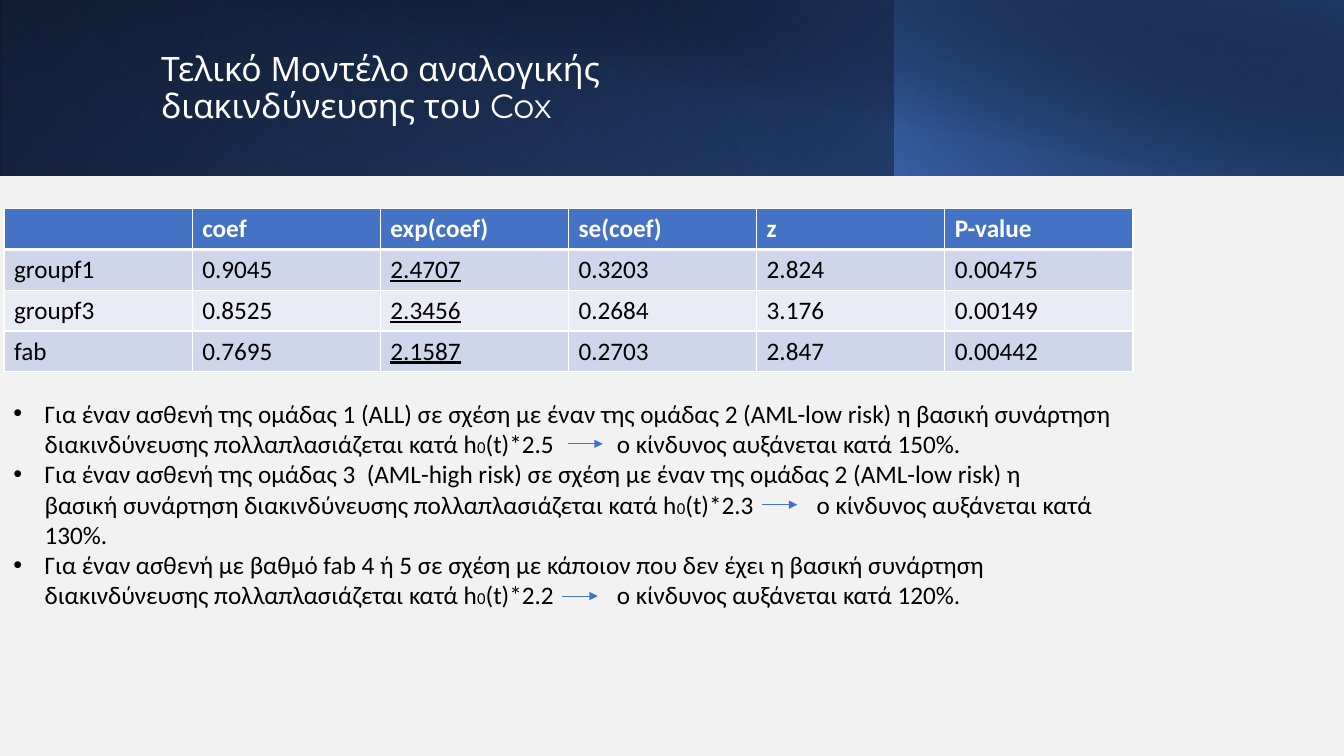
from lxml import etree
from pptx import Presentation
from pptx.dml.color import RGBColor
from pptx.enum.shapes import MSO_CONNECTOR, MSO_SHAPE
from pptx.enum.text import MSO_ANCHOR
from pptx.oxml.ns import qn
from pptx.util import Inches, Pt

RECT = MSO_SHAPE.RECTANGLE
STRAIGHT = MSO_CONNECTOR.STRAIGHT
MIDDLE = MSO_ANCHOR.MIDDLE

# Grid of tenths of an inch
COLS, ROWS = 133.33, 75
BANNER = 17.4
BODY_FONT, TITLE_FONT = "Calibri", "Montserrat"
COLORS = {
    "paper": "F2F2F2", "blue": "4472C4", "deep": "2F5597", "navy": "203864",
    "black": "000000", "white": "FFFFFF", "band": "CFD5EA", "pale": "E9EBF5",
}

TITLE = ["Τελικό Μοντέλο αναλογικής", "διακινδύνευσης του Cox"]
COX_TABLE = [
    ["", "coef", "exp(coef)", "se(coef)", "z", "P-value"],
    ["groupf1", "0.9045", "2.4707", "0.3203", "2.824", "0.00475"],
    ["groupf3", "0.8525", "2.3456", "0.2684", "3.176", "0.00149"],
    ["fab", "0.7695", "2.1587", "0.2703", "2.847", "0.00442"],
]
UNDERLINED = "exp(coef)"
NBSP = chr(160)  # keeps two words on one line
# Text before the hazard, factor, rise of the risk
FINDINGS = [
    ("Για έναν ασθενή της ομάδας 1 (ALL) σε σχέση με έναν της ομάδας 2 (AML-low risk) "
     "η βασική συνάρτηση διακινδύνευσης πολλαπλασιάζεται κατά h", "2.5", "150%"),
    (f"Για έναν ασθενή της ομάδας 3{NBSP} (AML-high risk) σε σχέση με έναν της ομάδας 2 "
     f"(AML-low risk) η βασική{NBSP}συνάρτηση διακινδύνευσης πολλαπλασιάζεται κατά h",
     "2.3", "130%"),
    ("Για έναν ασθενή με βαθμό fab 4 ή 5 σε σχέση με κάποιον που δεν έχει η βασική "
     "συνάρτηση διακινδύνευσης πολλαπλασιάζεται κατά h", "2.2", "120%"),
]
FINDINGS_TOP, INSET, LINE_PITCH = 39, 0.5, 3.02
# Line of the findings that holds the arrow, left end of the arrow
ARROWS = [(2, 56.3), (4, 75.6), (7, 55.8)]
ARROW_LENGTH = 3.5
ARROW_GAP = 41  # points added after one space to make room for an arrow


def grid(*units):
    return [Inches(u / 10) for u in units]


def rgb(name):
    return RGBColor.from_string(COLORS[name])


def add_xml(parent, tag, **attrs):
    return etree.SubElement(parent, qn(tag), attrs)


def add_color(parent, name, alpha=100):
    color = add_xml(parent, "a:srgbClr", val=COLORS[name])
    if alpha < 100:
        add_xml(color, "a:alpha", val=str(alpha * 1000))


def add_gradient(slide, box, stops, angle, flip=True, rotation=0):
    sp = slide.shapes.add_shape(RECT, *grid(*box))
    sp.shadow.inherit = False
    sp.line.fill.background()
    sp.rotation = rotation
    sp.fill.background()
    props = sp._element.spPr
    if flip:
        props.find(qn("a:xfrm")).set("flipH", "1")
    grad = etree.Element(qn("a:gradFill"), rotWithShape="1")
    props.replace(props.find(qn("a:noFill")), grad)
    stop_list = add_xml(grad, "a:gsLst")
    for position, name, alpha in stops:
        stop = add_xml(stop_list, "a:gs", pos=str(position * 1000))
        add_color(stop, name, alpha)
    add_xml(grad, "a:lin", ang=str(angle * 60000), scaled="0")


def add_run(p, text, size, color="black", font=BODY_FONT):
    r = p.add_run()
    r.text = text
    r.font.size = Pt(size)
    r.font.name = font
    r.font.color.rgb = rgb(color)
    return r


def add_text_frame(slide, box):
    tf = slide.shapes.add_textbox(*grid(*box)).text_frame
    tf.word_wrap = True
    return tf


def add_title(slide):
    tf = add_text_frame(slide, (15, 3.2, 108.2, 11.3))
    tf.vertical_anchor = MIDDLE
    p = tf.paragraphs[0]
    p.line_spacing = 0.9
    for i, text in enumerate(TITLE):
        if i:
            p.add_line_break()
        add_run(p, text, 24, "white", TITLE_FONT)


def add_cell_borders(cell, bottom):
    props = cell._tc.get_or_add_tcPr()
    sides = [("a:lnL", 1), ("a:lnR", 1), ("a:lnT", 1), ("a:lnB", bottom)]
    for i, (tag, width) in enumerate(sides):
        line = etree.Element(qn(tag), w=str(Pt(width)))
        add_color(add_xml(line, "a:solidFill"), "white")
        props.insert(i, line)


def add_cox_table(slide):
    n_rows, n_cols = len(COX_TABLE), len(COX_TABLE[0])
    frame = slide.shapes.add_table(n_rows, n_cols, *grid(0.4, 20.7, 112, 16.2))
    for i, values in enumerate(COX_TABLE):
        header = i == 0
        fill = "blue" if header else ("band" if i % 2 else "pale")
        for j, value in enumerate(values):
            cell = frame.table.cell(i, j)
            cell.fill.solid()
            cell.fill.fore_color.rgb = rgb(fill)
            add_cell_borders(cell, 3 if header else 1)
            p = cell.text_frame.paragraphs[0]
            p.font.size = Pt(18)
            if value:
                r = add_run(p, value, 18, "white" if header else "black")
                r.font.bold = header
                r.font.underline = not header and COX_TABLE[0][j] == UNDERLINED


def add_bullet(p):
    props = p._p.get_or_add_pPr()
    indent = Inches(0.31)
    props.set("marL", str(indent))
    props.set("indent", str(-indent))
    add_xml(props, "a:buFont", typeface="Arial")
    add_xml(props, "a:buChar", char="•")


def add_findings(slide):
    tf = add_text_frame(slide, (0.35, FINDINGS_TOP, 114.6, 25.2))
    for i, (lead, factor, rise) in enumerate(FINDINGS):
        p = tf.add_paragraph() if i else tf.paragraphs[0]
        add_bullet(p)
        add_run(p, lead, 18)
        add_run(p, "0", 12)
        add_run(p, f"(t)*{factor}", 18)
        gap = add_run(p, " ", 18)
        gap._r.get_or_add_rPr().set("spc", str(ARROW_GAP * 100))
        add_run(p, f"ο κίνδυνος αυξάνεται κατά {rise}.", 18)


def add_arrow(slide, line, x):
    y = FINDINGS_TOP + INSET + (line - 0.5) * LINE_PITCH
    arrow = slide.shapes.add_connector(STRAIGHT, *grid(x, y, x + ARROW_LENGTH, y))
    arrow.line.color.rgb = rgb("blue")
    arrow.line.width = Pt(0.5)
    add_xml(arrow.line._get_or_add_ln(), "a:tailEnd", type="triangle")
    add_xml(arrow._element.spPr, "a:effectLst")


def main():
    prs = Presentation()
    prs.slide_width, prs.slide_height = grid(COLS, ROWS)
    slide = prs.slides.add_slide(prs.slide_layouts[6])
    slide.background.fill.solid()
    slide.background.fill.fore_color.rgb = rgb("paper")

    # Banner
    add_gradient(slide, (0, 0, COLS, BANNER),
                 [(0, "black", 100), (100, "deep", 100)], 140)
    add_gradient(slide, (0, 0, 88.8, BANNER),
                 [(20, "blue", 0), (100, "navy", 55)], 230, rotation=180)
    add_gradient(slide, (88.7, 0, COLS - 88.7, BANNER),
                 [(0, "blue", 66), (100, "black", 30)], 220)
    add_gradient(slide, (5, 0, COLS - 5, BANNER),
                 [(50, "black", 0), (99, "navy", 52)], 280, flip=False)
    add_title(slide)

    # Model estimates and their reading
    add_cox_table(slide)
    add_findings(slide)
    for line, x in ARROWS:
        add_arrow(slide, line, x)

    prs.save("out.pptx")


if __name__ == "__main__":
    main()
